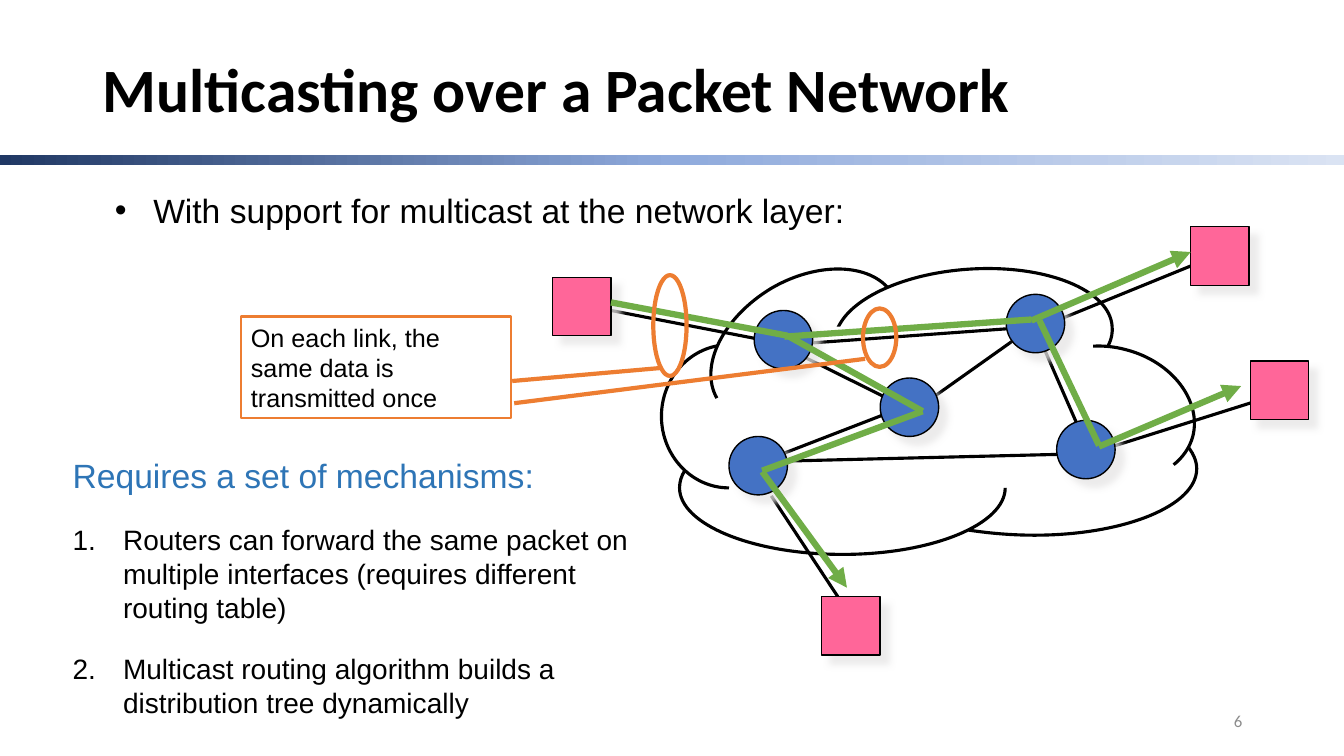
import math

import pptx
import pptx.dml.color
import pptx.enum.shapes
import pptx.enum.text
import pptx.oxml
import pptx.oxml.ns
import pptx.util

Inches = pptx.util.Inches
Pt = pptx.util.Pt
Kind = pptx.enum.shapes.MSO_SHAPE
Align = pptx.enum.text.PP_ALIGN
Anchor = pptx.enum.text.MSO_ANCHOR
NAMESPACE = pptx.oxml.ns.nsdecls("a")

BLACK, WHITE = "000000", "FFFFFF"
GREEN, ORANGE = "70AD47", "ED7D31"
NODE_SIZE = 0.58

# Each lobe: box, rotation, then start, curve control and end points, inner corner.
CLOUD_LOBES = [
    ((9.61, 4.35, 2.27, 0.96), 0,
     [(9.61, 5.26), (9.81, 5.29), (10.03, 5.31), (10.26, 5.31), (11.15, 5.31), (11.87, 5.02),
      (11.87, 4.65), (11.87, 4.55), (11.81, 4.44), (11.7, 4.35), (10.26, 4.65)]),
    ((6.74, 4.51, 3.23, 0.99), 0,
     [(6.95, 4.51), (6.81, 4.61), (6.74, 4.72), (6.74, 4.84), (6.74, 5.2), (7.46, 5.5),
      (8.36, 5.5), (9.25, 5.5), (9.97, 5.2), (9.97, 4.84), (8.36, 4.84)]),
    ((6.35, 3.64, 1.42, 0.99), 90,
     [(7.56, 3.52), (7.46, 3.46), (7.34, 3.42), (7.23, 3.42), (6.86, 3.42), (6.56, 3.74),
      (6.56, 4.13), (6.56, 4.52), (6.86, 4.84), (7.23, 4.84), (7.23, 4.13)]),
    ((6.94, 2.78, 2.02, 1.21), 149.8,
     [(8.75, 3.62), (8.93, 3.38), (8.97, 3.12), (8.86, 2.93), (8.68, 2.61), (8.13, 2.58),
      (7.65, 2.86), (7.17, 3.15), (6.93, 3.63), (7.11, 3.95), (7.98, 3.44)]),
    ((8.27, 2.67, 2.76, 1.21), 176.4,
     [(10.47, 3.82), (10.84, 3.68), (11.05, 3.46), (11.03, 3.24), (11.01, 2.88), (10.38, 2.62),
      (9.61, 2.67), (8.85, 2.72), (8.26, 3.05), (8.28, 3.41), (9.66, 3.33)]),
    ((10.37, 3.48, 1.53, 0.99), 194.9,
     [(11.64, 4.61), (11.73, 4.54), (11.8, 4.44), (11.83, 4.33), (11.92, 3.98), (11.63, 3.59),
      (11.17, 3.47), (10.92, 3.4), (10.65, 3.43), (10.46, 3.54), (11, 4.11)]),
]
LINKS = [
    (7.56, 4.58, 10.81, 4.5), (10.23, 3.17, 10.81, 4.5), (9.06, 4.08, 7.73, 3.42),
    (9.06, 4.08, 10.23, 3.25), (7.56, 4.58, 9.06, 4), (10.15, 3.25, 7.81, 3.42),
    (7.81, 3.42, 6.06, 3.08), (12.15, 2.5, 10.31, 3.25), (12.65, 3.92, 10.81, 4.5),
    (8.31, 5.92, 7.65, 4.92),
]
ROUTERS = [(8.73, 3.75), (7.23, 4.33), (9.98, 2.92), (10.48, 4.17), (7.48, 3.08)]
HOSTS = [(5.48, 2.75), (11.81, 2.25), (12.4, 3.58), (8.15, 5.92)]
TREE_BRANCHES = [
    (6.06, 3, 7.81, 3.33), (7.78, 3.34, 10.23, 3.17), (7.81, 3.33, 9.15, 4.08),
    (10.31, 3.18, 10.9, 4.42), (7.56, 4.67, 9.15, 4.08),
]
TREE_LEAVES = [(10.23, 3.18, 11.81, 2.5), (7.56, 4.68, 8.4, 5.83), (10.9, 4.43, 12.31, 3.83)]


def color(hex_code):
    return pptx.dml.color.RGBColor.from_string(hex_code)


def paint(shape, fill=None, line=None, width=1):
    shape.shadow.inherit = False
    if fill:
        shape.fill.solid()
        shape.fill.fore_color.rgb = color(fill)
    else:
        shape.fill.background()
    if line:
        shape.line.color.rgb = color(line)
        shape.line.width = Pt(width)
    else:
        shape.line.fill.background()


def place(shape, box):
    shape.left, shape.top, shape.width, shape.height = map(Inches, box)


def add_figure(slide, kind, box, **style):
    shape = slide.shapes.add_shape(kind, *map(Inches, box))
    paint(shape, **style)
    return shape


def add_line(slide, ends, line, width, arrow=False):
    connector = slide.shapes.add_connector(
        pptx.enum.shapes.MSO_CONNECTOR.STRAIGHT, *map(Inches, ends))
    connector.line.color.rgb = color(line)
    connector.line.width = Pt(width)
    if arrow:
        connector.line._get_or_add_ln().append(
            pptx.oxml.parse_xml(f'<a:tailEnd {NAMESPACE} type="triangle"/>'))
    connector._element.spPr.append(pptx.oxml.parse_xml(f"<a:effectLst {NAMESPACE}/>"))


def add_node(slide, kind, corner, fill):
    """Add a network node with a soft grey shadow."""
    node = add_figure(slide, kind, (*corner, NODE_SIZE, NODE_SIZE), fill=fill, line=BLACK)
    effects = node._element.spPr.find(pptx.oxml.ns.qn("a:effectLst"))
    effects.append(pptx.oxml.parse_xml(
        f'<a:outerShdw {NAMESPACE} blurRad="{Pt(5)}" dist="{Pt(8.5)}" dir="2700000">'
        '<a:srgbClr val="E7E6E6"><a:alpha val="75000"/></a:srgbClr></a:outerShdw>'))


def prepare_text(shape, box, anchor=Anchor.TOP):
    place(shape, box)
    frame = shape.text_frame
    frame.word_wrap = True
    frame.auto_size = pptx.enum.text.MSO_AUTO_SIZE.NONE
    frame.vertical_anchor = anchor
    return frame


def write(para, text, size, hex_code=BLACK, font="Arial", bold=False, align=Align.LEFT):
    para.alignment = align
    span = para.add_run()
    span.text = text
    span.font.size = Pt(size)
    span.font.name = font
    span.font.bold = bold
    span.font.color.rgb = color(hex_code)


def set_bullet(para, bullet, indent=0):
    """Give the paragraph a hanging indent in inches and a bullet element."""
    properties = para._p.get_or_add_pPr()
    properties.set("marL", str(Inches(indent)))
    properties.set("indent", str(-Inches(indent)))
    properties.append(pptx.oxml.parse_xml(bullet))


def add_header(slide, box):
    left, top, width, height = box
    title = prepare_text(slide.shapes.title, (left + 0.92, top + 0.4, 11.5, 1.04), Anchor.MIDDLE)
    para = title.paragraphs[0]
    para.line_spacing = 0.9
    write(para, "Multicasting over a Packet Network", 44, font="Calibri", bold=True)
    band = add_figure(slide, Kind.RECTANGLE, (left, top + height - 0.1, width, 0.1), fill=WHITE)
    properties = band._element.spPr
    stops = "".join(f'<a:gs pos="{position}"><a:srgbClr val="{shade}"/></a:gs>' for position, shade
                    in [(0, "203864"), (50000, "8FAADC"), (100000, "DAE3F3")])
    properties.replace(
        properties.find(pptx.oxml.ns.qn("a:solidFill")),
        pptx.oxml.parse_xml(f'<a:gradFill {NAMESPACE}><a:gsLst>{stops}</a:gsLst>'
                            '<a:lin ang="0" scaled="0"/></a:gradFill>'))


def add_lead(slide, box):
    para = prepare_text(slide.placeholders[1], box).paragraphs[0]
    para.space_before = Pt(0)
    write(para, "With support for multicast at the network layer:", 24)
    set_bullet(para, f'<a:buChar {NAMESPACE} char="•"/>', 0.38)


def add_mechanisms(slide, box):
    frame = prepare_text(slide.placeholders[2], box)
    heading = frame.paragraphs[0]
    heading.space_before, heading.space_after = Pt(0), Pt(10)
    write(heading, "Requires a set of mechanisms:", 24, "2E75B6")
    set_bullet(heading, f"<a:buNone {NAMESPACE}/>")
    for text in ["Routers can forward the same packet on multiple interfaces "
                 "(requires different routing table)",
                 "Multicast routing algorithm builds a distribution tree dynamically"]:
        para = frame.add_paragraph()
        para.space_before, para.space_after = Pt(10), Pt(10)
        write(para, text, 20)
        set_bullet(para, f'<a:buAutoNum {NAMESPACE} type="arabicPeriod"/>', 0.5)


def turn_back(point, box, degrees):
    """Undo the rotation about the middle of the box; return EMU from its corner."""
    left, top, width, height = box
    angle = math.radians(-degrees)
    x, y = point[0] - left - width / 2, point[1] - top - height / 2
    return (Inches(width / 2 + x * math.cos(angle) - y * math.sin(angle)),
            Inches(height / 2 + x * math.sin(angle) + y * math.cos(angle)))


def add_lobe(slide, box, degrees, points):
    """Add a filled lobe whose curved edge alone is outlined."""
    local = [turn_back(point, box, degrees) for point in points]
    builder = slide.shapes.build_freeform(*local[0])
    builder.add_line_segments(local[3::3] + local[-1:], close=True)
    lobe = builder.convert_to_shape()
    place(lobe, box)
    lobe.rotation = degrees
    paint(lobe, fill=WHITE, line=BLACK, width=2.25)
    start, *curve, corner = [f'<a:pt x="{x}" y="{y}"/>' for x, y in local]
    edge = f"<a:moveTo>{start}</a:moveTo>" + "".join(
        f'<a:cubicBezTo>{"".join(curve[first:first + 3])}</a:cubicBezTo>'
        for first in range(0, len(curve), 3))
    size = f'w="{lobe.width}" h="{lobe.height}"'
    outlines = pptx.oxml.parse_xml(
        f'<a:pathLst {NAMESPACE}><a:path {size} fill="none">{edge}</a:path>'
        f'<a:path {size} stroke="0">{edge}<a:lnTo>{corner}</a:lnTo><a:close/></a:path></a:pathLst>')
    geometry = lobe._element.spPr.find(pptx.oxml.ns.qn("a:custGeom"))
    geometry.replace(geometry.find(pptx.oxml.ns.qn("a:pathLst")), outlines)


def add_cloud(slide, box):
    left, top = box[:2]
    add_figure(slide, Kind.RECTANGLE, (left + 0.67, top + 1.13, 4.19, 1.23), fill=WHITE)
    for lobe in CLOUD_LOBES:
        add_lobe(slide, *lobe)
    add_figure(slide, Kind.RECTANGLE, (left + 0.86, top + 0.57, 3.42, 1.23), fill=WHITE)


def add_network(slide):
    for ends in LINKS:
        add_line(slide, ends, BLACK, 2.25)
    for corner in ROUTERS:
        add_node(slide, Kind.OVAL, corner, "4472C4")
    for corner in HOSTS:
        add_node(slide, Kind.RECTANGLE, corner, "FF6699")
    for ends in TREE_BRANCHES + TREE_LEAVES:
        add_line(slide, ends, GREEN, 4.5, arrow=ends in TREE_LEAVES)


def add_callout(slide, box):
    note = add_figure(slide, Kind.RECTANGLE, box, line=ORANGE, width=1.5)
    write(prepare_text(note, box, Anchor.MIDDLE).paragraphs[0],
          "On each link, the same data is transmitted once", 18)
    for ring, ends in [((6.48, 2.73, 0.33, 1), (6.56, 3.65, 5.08, 3.78)),
                       ((8.56, 3.06, 0.33, 0.58), (8.58, 3.56, 5.1, 4))]:
        add_figure(slide, Kind.OVAL, ring, line=ORANGE, width=3)
        add_line(slide, ends, ORANGE, 3)


def add_page_number(slide, box):
    number = slide.shapes.add_textbox(*map(Inches, box))
    write(prepare_text(number, box, Anchor.MIDDLE).paragraphs[0], "6", 12, "8C8C8C",
          font="Calibri", align=Align.RIGHT)


def main():
    deck = pptx.Presentation()
    deck.slide_width, deck.slide_height = Inches(13.33), Inches(7.5)
    slide = deck.slides.add_slide(deck.slide_layouts[3])
    add_header(slide, (0, 0, 13.33, 1.64))
    add_lead(slide, (1.04, 1.83, 8.61, 1.58))
    add_mechanisms(slide, (0.62, 4.46, 5.78, 2.8))
    add_cloud(slide, (6.56, 2.67, 5.31, 2.83))
    add_network(slide)
    add_callout(slide, (2.39, 3.14, 2.68, 1.01))
    add_page_number(slide, (9.42, 6.95, 3, 0.4))
    deck.save("out.pptx")


if __name__ == "__main__":
    main()
